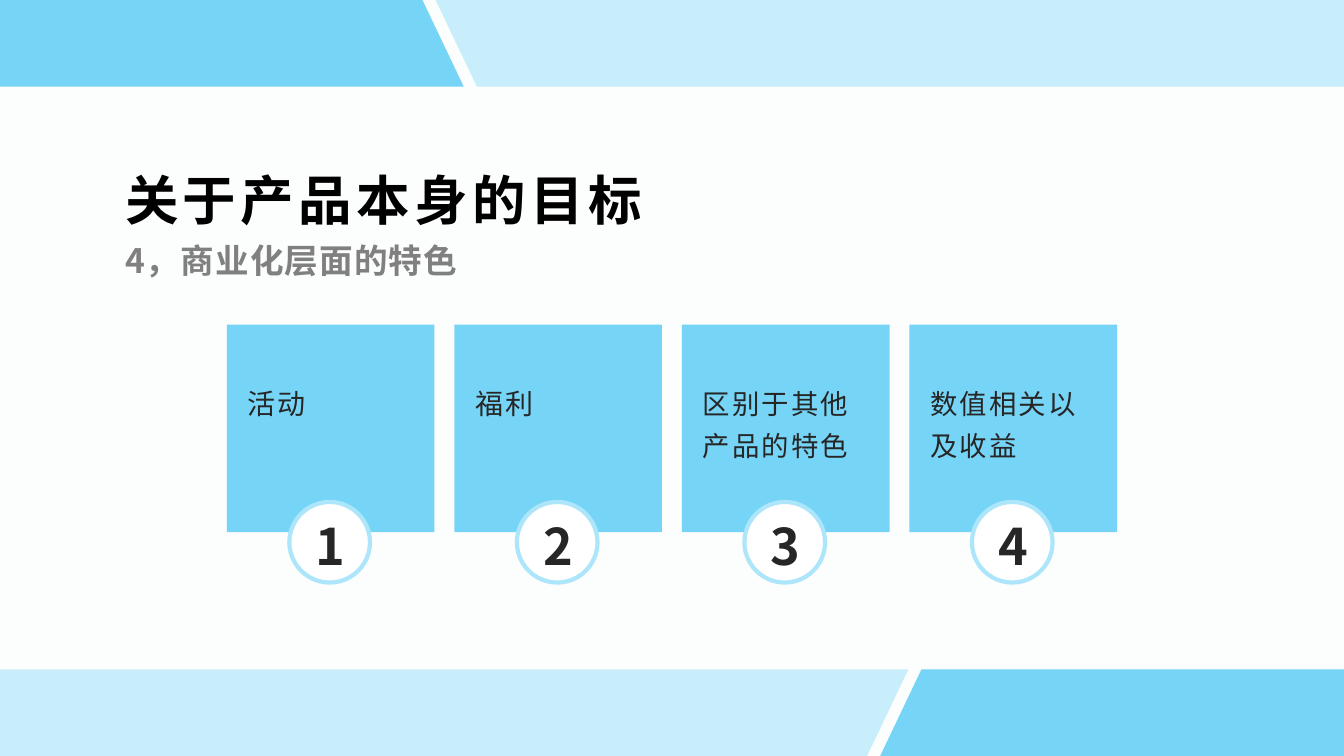
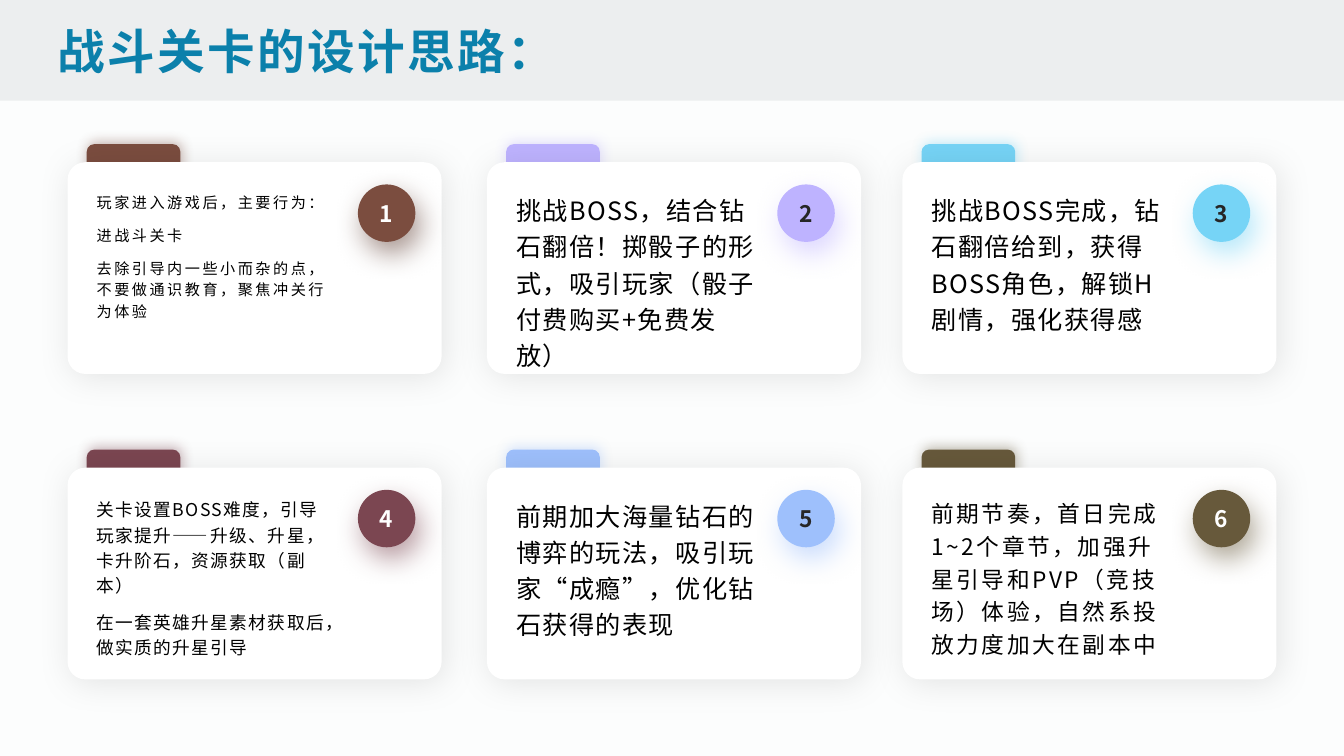
from lxml import etree
from pptx import Presentation
from pptx.dml.color import RGBColor
from pptx.enum.shapes import MSO_SHAPE
from pptx.enum.text import MSO_ANCHOR, MSO_AUTO_SIZE, PP_ALIGN
from pptx.oxml.ns import qn
from pptx.util import Inches, Pt

RECT, ROUND, OVAL = MSO_SHAPE.RECTANGLE, MSO_SHAPE.ROUNDED_RECTANGLE, MSO_SHAPE.OVAL
TOP, MIDDLE, BOTTOM = MSO_ANCHOR.TOP, MSO_ANCHOR.MIDDLE, MSO_ANCHOR.BOTTOM
LEFT, CENTER = PP_ALIGN.LEFT, PP_ALIGN.CENTER
NO_FIT = MSO_AUTO_SIZE.NONE

PAPER = RGBColor(0xFC, 0xFD, 0xFD)
WHITE = RGBColor(0xFF, 0xFF, 0xFF)
BLACK = RGBColor(0x00, 0x00, 0x00)
INK = RGBColor(0x26, 0x26, 0x26)
GREY = RGBColor(0x80, 0x80, 0x80)
BAND_GREY = RGBColor(0xEC, 0xEE, 0xEF)
TEAL = RGBColor(0x0B, 0x80, 0xAB)
SKY = RGBColor(0x76, 0xD4, 0xF6)
PALE_SKY = RGBColor(0xC8, 0xEE, 0xFB)
RING = RGBColor(0xAD, 0xE5, 0xFA)
BROWN = RGBColor(0x7B, 0x4D, 0x3F)
DARK_BROWN = RGBColor(0x5C, 0x3A, 0x2F)
LILAC = RGBColor(0xBE, 0xB3, 0xFF)
WINE = RGBColor(0x7B, 0x46, 0x51)
BLUE = RGBColor(0x9E, 0xC0, 0xFC)
OLIVE = RGBColor(0x67, 0x59, 0x3B)

# Shadows: opacity in percent, blur and distance in points, angle in degrees
TAB_SHADOW = (40, 9, 2, 300)
CARD_SHADOW = (10, 25, 3, 45)
BADGE_SHADOW = (52, 20, 9, 67)

WIDTH, HEIGHT = 13.33, 7.5
HEADING_INSETS = (0.07, 0.03)
TITLE_ONLY, TITLE_AND_BODY = 5, 1

FEATURES = [("活动", 20), ("福利", 20),
            ("区别于其他产品的特色", 19.6), ("数值相关以及收益", 19.6)]

# Colour, number colour, text size, letter spacing, paragraphs
IDEAS = [
    (BROWN, WHITE, 10.8, 1.8,
     ["玩家进入游戏后，主要行为：", "进战斗关卡",
      "去除引导内一些小而杂的点，不要做通识教育，聚焦冲关行为体验"]),
    (LILAC, INK, 18, 1,
     ["挑战BOSS，结合钻石翻倍！掷骰子的形式，吸引玩家（骰子付费购买+免费发放）"]),
    (SKY, INK, 18, 1,
     ["挑战BOSS完成，钻石翻倍给到，获得BOSS角色，解锁H剧情，强化获得感"]),
    (WINE, WHITE, 12.6, 1,
     ["关卡设置BOSS难度，引导玩家提升——升级、升星，卡升阶石，资源获取（副本）",
      "在一套英雄升星素材获取后，做实质的升星引导"]),
    (BLUE, INK, 18, 1,
     ["前期加大海量钻石的博弈的玩法，吸引玩家“成瘾”，优化钻石获得的表现"]),
    (OLIVE, WHITE, 16.2, 1.8,
     ["前期节奏，首日完成1~2个章节，加强升星引导和PVP（竞技场）体验，"
      "自然系投放力度加大在副本中"]),
]


def assign(target, values):
    for name, value in values.items():
        setattr(target, name, value)


class Deck:
    """Holds the style and the slide being built."""

    font = "Noto Sans CJK SC"

    def __init__(self):
        self.prs = Presentation()
        self.prs.slide_width, self.prs.slide_height = Inches(WIDTH), Inches(HEIGHT)
        self.slide = None

    def new_slide(self, layout):
        self.slide = self.prs.slides.add_slide(self.prs.slide_layouts[layout])
        fill = self.slide.background.fill
        fill.solid()
        fill.fore_color.rgb = PAPER

    def set_text(self, frame, paragraphs, size, colour, bold=False, spacing=0,
                 anchor=TOP, insets=(0.1, 0.05), plain=False, **layout):
        side, edge = map(Inches, insets)
        assign(frame, {"word_wrap": True, "auto_size": NO_FIT, "vertical_anchor": anchor,
                       "margin_left": side, "margin_right": side,
                       "margin_top": edge, "margin_bottom": edge})
        for index, text in enumerate(paragraphs):
            paragraph = frame.add_paragraph() if index else frame.paragraphs[0]
            if plain:  # cancel the bullet and indent of the body placeholder
                props = paragraph._p.get_or_add_pPr()
                props.set("marL", "0")
                props.set("indent", "0")
                etree.SubElement(props, qn("a:buNone"))
            assign(paragraph, {"alignment": LEFT, "space_before": Pt(0), **layout})
            run = paragraph.add_run()
            run.text = text
            assign(run.font, {"name": self.font, "size": Pt(size), "bold": bold})
            run.font.color.rgb = colour
            run_props = run._r.get_or_add_rPr()
            run_props.set("spc", str(round(spacing * 100)))
            etree.SubElement(run_props, qn("a:ea"), typeface=self.font)

    def heading(self, placeholder, box, text, size, colour, **style):
        assign(placeholder, dict(zip(("left", "top", "width", "height"), map(Inches, box))))
        self.slide.shapes._spTree.append(placeholder._element)  # above what is drawn so far
        self.set_text(placeholder.text_frame, [text], size, colour, bold=True,
                      insets=HEADING_INSETS, **style)

    def text(self, box, paragraphs, size, colour, **style):
        frame = self.slide.shapes.add_textbox(*map(Inches, box)).text_frame
        self.set_text(frame, paragraphs, size, colour, **style)

    def paint(self, shape, fill, ring=None):
        shape.fill.solid()
        shape.fill.fore_color.rgb = fill
        if ring:
            shape.line.color.rgb = ring
            shape.line.width = Pt(3)
        else:
            shape.line.fill.background()
        shape.shadow.inherit = False

    def shape(self, kind, box, fill, ring=None, shadow=None, shade=BLACK):
        shape = self.slide.shapes.add_shape(kind, *map(Inches, box))
        if kind == ROUND:
            shape.adjustments[0] = 0.083
        self.paint(shape, fill, ring)
        if shadow:
            opacity, blur, distance, angle = shadow
            effects = shape._element.spPr.find(qn("a:effectLst"))
            outer = etree.SubElement(
                effects, qn("a:outerShdw"), blurRad=str(Pt(blur)), dist=str(Pt(distance)),
                dir=str(angle * 60000), algn="ctr", rotWithShape="0")
            tint = etree.SubElement(outer, qn("a:srgbClr"), val=str(shade))
            etree.SubElement(tint, qn("a:alpha"), val=str(opacity * 1000))
        return shape

    def polygon(self, points, fill):
        start, *rest = [(Inches(x), Inches(y)) for x, y in points]
        builder = self.slide.shapes.build_freeform(*start)
        builder.add_line_segments(rest, close=True)
        self.paint(builder.convert_to_shape(), fill)

    def slanted_bands(self):
        """Two-tone bands; the bottom one is the top one flipped left to right."""
        depth = 0.86
        dark = [(0, 0), (4.19, 0), (4.6, depth), (0, depth)]
        light = [(4.32, 0), (WIDTH, 0), (WIDTH, depth), (4.73, depth)]
        for points, fill in ((dark, SKY), (light, PALE_SKY)):
            self.polygon(points, fill)
            self.polygon([(WIDTH - x, HEIGHT - depth + y) for x, y in points], fill)


def build_features(deck):
    deck.new_slide(TITLE_AND_BODY)
    deck.slanted_bands()
    title, subtitle = deck.slide.placeholders
    deck.heading(title, (1.17, 1.5, 11, 0.82), "关于产品本身的目标", 38.2, BLACK,
                 spacing=3.2, anchor=BOTTOM)
    deck.heading(subtitle, (1.17, 2.35, 11, 0.48), "4，商业化层面的特色", 24, GREY,
                 spacing=0.8, plain=True)

    # Four numbered squares
    first, last, side = 2.25, 9.02, 2.06
    pitch = (last - first) / (len(FEATURES) - 1)
    for index, (feature, size) in enumerate(FEATURES):
        left = first + index * pitch
        deck.shape(RECT, (left, 3.22, side, side), SKY)
        deck.shape(OVAL, (left + 0.62, 4.98, 0.8, 0.8), WHITE, ring=RING)
        deck.text((left + 0.11, 3.69, 1.81, 1), [feature], size, INK,
                  spacing=1.5, line_spacing=1.3)
        deck.text((left + 0.63, 4.99, 0.8, 0.73), [str(index + 1)], 36, INK, bold=True,
                  spacing=3, anchor=MIDDLE, insets=(0, 0), alignment=CENTER,
                  line_spacing=1.2)


def build_ideas(deck):
    deck.new_slide(TITLE_ONLY)
    deck.shape(RECT, (0, 0, WIDTH, 1), BAND_GREY)
    deck.heading(deck.slide.shapes.title, (0.5, 0.17, 12.33, 0.67), "战斗关卡的设计思路：",
                 34, TEAL, spacing=1.8, anchor=MIDDLE)

    # Cards in two rows of three, each with a tab and a numbered badge
    columns, rows = (0.67, 4.83, 8.95), (1.61, 4.64)
    for index, (colour, number_colour, size, spacing, paragraphs) in enumerate(IDEAS):
        left, top = columns[index % 3], rows[index // 3]
        deck.shape(ROUND, (left + 0.19, top - 0.18, 0.93, 0.94), colour,
                   shadow=TAB_SHADOW, shade=colour)
        deck.shape(ROUND, (left, top, 3.71, 2.1), WHITE, shadow=CARD_SHADOW)
        deck.text((left + 0.19, top + 0.22, 2.59, 1.71), paragraphs, size, BLACK,
                  spacing=spacing, line_spacing=1.2, space_after=Pt(8))
        badge = deck.shape(OVAL, (left + 2.88, top + 0.22, 0.57, 0.57), colour,
                           shadow=BADGE_SHADOW,
                           shade=DARK_BROWN if colour == BROWN else colour)
        deck.set_text(badge.text_frame, [str(index + 1)], 16.2, number_colour, bold=True,
                      anchor=MIDDLE, alignment=CENTER)


def main():
    deck = Deck()
    build_features(deck)
    build_ideas(deck)
    deck.prs.save("out.pptx")


if __name__ == "__main__":
    main()
